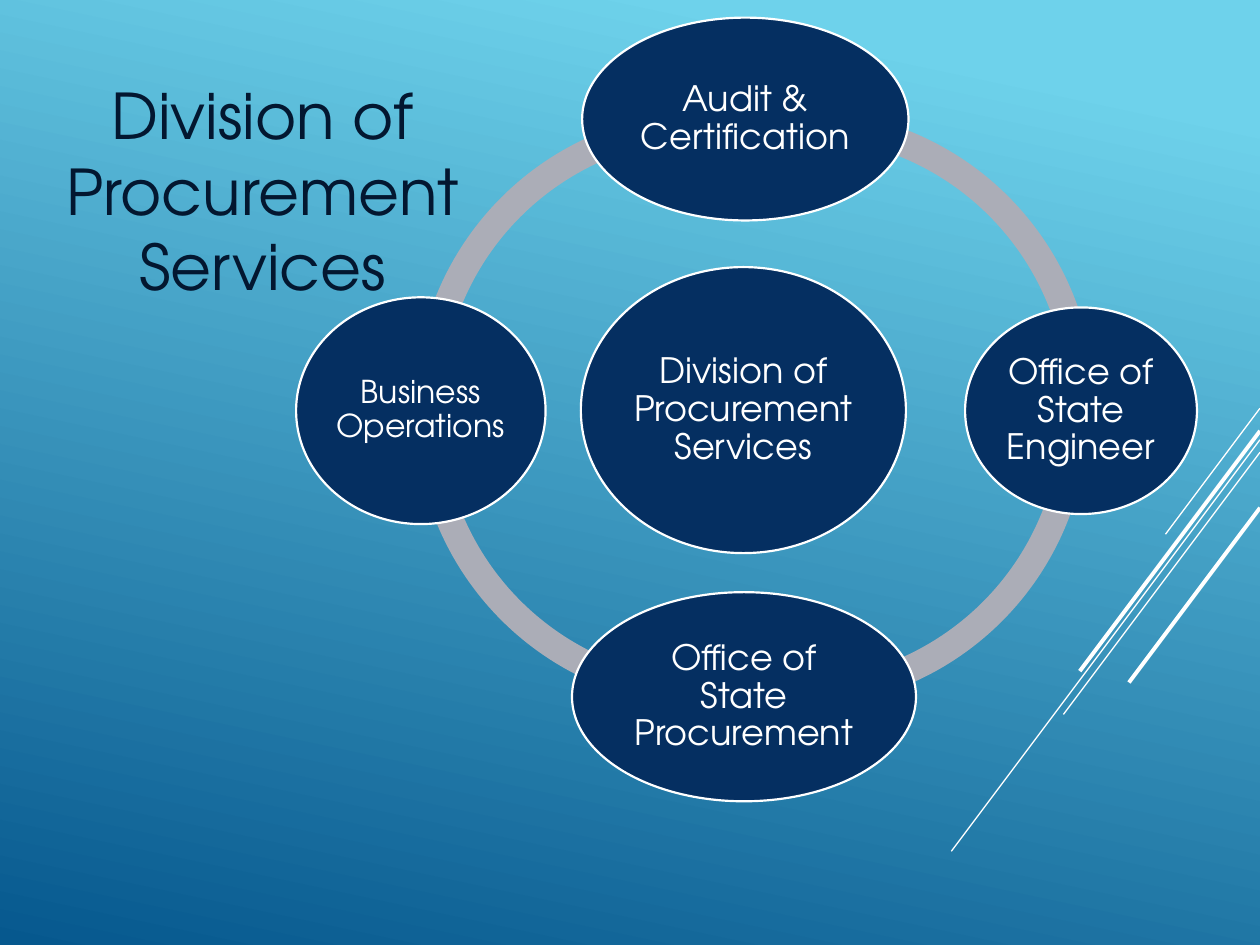
from dataclasses import dataclass

from lxml import etree
from pptx import Presentation
from pptx import util as u
from pptx.dml.color import RGBColor
from pptx.enum import shapes, text
from pptx.oxml import ns


@dataclass(frozen=True)
class Theme:
    font: str = "TeX Gyre Adventor"
    sky: str = "6ED2EB"
    deep: str = "06588E"
    navy: str = "052F61"
    ring: str = "ABADB7"
    ink: str = "031730"
    white: str = "FFFFFF"
    title_size: int = 36
    label_size: int = 20
    small_size: int = 18
    outline: float = 1.25
    thin: float = 0.75
    thick: float = 2.25


THEME = Theme()


@dataclass(frozen=True)
class Box:
    left: float
    top: float
    width: float
    height: float

    def inside(self, left, top, width, height):
        return Box(self.left + left, self.top + top, width, height)

    def lengths(self):
        return [u.Inches(value) for value in (self.left, self.top, self.width, self.height)]


def color(value):
    return RGBColor.from_string(value)


def set_attributes(target, values):
    for name, value in values.items():
        setattr(target, name, value)


def write_text(shape, content, size, ink, insets, line_spacing=1.0):
    frame = shape.text_frame
    horizontal, vertical = (u.Inches(inset) for inset in insets)
    set_attributes(frame, {
        "word_wrap": True,
        "vertical_anchor": text.MSO_ANCHOR.MIDDLE,
        "margin_left": horizontal, "margin_right": horizontal,
        "margin_top": vertical, "margin_bottom": vertical,
    })
    paragraph = frame.paragraphs[0]
    set_attributes(paragraph, {"alignment": text.PP_ALIGN.CENTER, "line_spacing": line_spacing})
    run = paragraph.add_run()
    run.text = content
    set_attributes(run.font, {"name": THEME.font, "size": u.Pt(size)})
    run.font.color.rgb = color(ink)


def add_filled_shape(slide, kind, box, fill):
    shape = slide.shapes.add_shape(kind, *box.lengths())
    shape.shadow.inherit = False
    shape.fill.solid()
    shape.fill.fore_color.rgb = color(fill)
    shape.line.fill.background()
    return shape


def paint_background(slide):
    fill = slide.background.fill
    fill.gradient()
    fill.gradient_angle = 360 - 102
    for stop, position, value in zip(fill.gradient_stops, (0.1, 1), (THEME.sky, THEME.deep)):
        stop.position = position
        stop.color.rgb = color(value)


def add_diagonal_lines(slide, box):
    # Parallel lines fall from the right edge, four down for three across
    right = box.left + box.width
    for drop, run, weight in (
        (0, 0.75, THEME.thin),
        (0.25, 2.45, THEME.thin),
        (0.35, 1.56, THEME.thin),
        (0.18, 1.43, THEME.thick),
        (0.79, 1.04, THEME.thick),
    ):
        start = box.top + drop
        ends = (right, start, right - run, start + run * 4 / 3)
        line = slide.shapes.add_connector(
            shapes.MSO_CONNECTOR.STRAIGHT, *(u.Inches(value) for value in ends))
        line.line.color.rgb = color(THEME.white)
        line.line.width = u.Pt(weight)
        etree.SubElement(line._element.spPr, ns.qn("a:effectLst"))


def add_title(slide, box):
    title = slide.shapes.add_textbox(*box.lengths())
    write_text(title, "Division of Procurement Services",
               THEME.title_size, THEME.ink, (0.07, 0.03))


def add_ring(slide, box):
    # Four arcs, each with its start and end angle in degrees
    diameter, thickness = 4.7, 0.046
    for left, top, start, end in (
        (0.94, 0.74, 179.24, 276.84),
        (0.94, 0.77, 83.17, 180.05),
        (1.59, 0.78, 359.57, 99.45),
        (1.64, 0.73, 260.54, 1.13),
    ):
        arc = add_filled_shape(slide, shapes.MSO_SHAPE.BLOCK_ARC,
                               box.inside(left, top, diameter, diameter), THEME.ring)
        # Angles are stored in 60000ths of a degree, adjustments in 100000ths
        for index, value in enumerate((start * 0.6, end * 0.6, thickness)):
            arc.adjustments[index] = value


def add_offices(slide, box):
    for label, place, size in (
        ("Division of Procurement Services", (2.26, 1.98, 2.58, 2.27), THEME.label_size),
        ("Audit & Certification", (2.27, 0, 2.59, 1.61), THEME.label_size),
        ("Office of State Engineer", (5.31, 2.3, 1.84, 1.64), THEME.label_size),
        ("Office of State Procurement", (2.19, 4.56, 2.73, 1.66), THEME.label_size),
        ("Business Operations", (0, 2.22, 1.98, 1.8), THEME.small_size),
    ):
        office = add_filled_shape(slide, shapes.MSO_SHAPE.OVAL, box.inside(*place), THEME.navy)
        office.line.color.rgb = color(THEME.white)
        office.line.width = u.Pt(THEME.outline)
        write_text(office, label, size, THEME.white, (0.03, 0.03), 0.9)


def main():
    presentation = Presentation()
    set_attributes(presentation, {"slide_width": u.Inches(10), "slide_height": u.Inches(7.5)})
    slide = presentation.slides.add_slide(presentation.slide_layouts[6])

    # Backdrop
    paint_background(slide)
    add_diagonal_lines(slide, Box(7.55, 3.24, 2.45, 3.51))

    # Title and radial diagram
    add_title(slide, Box(0.17, -0.24, 3.83, 3.5))
    diagram = Box(2.35, 0.14, 7.15, 6.22)
    add_ring(slide, diagram)
    add_offices(slide, diagram)

    presentation.save("out.pptx")


if __name__ == "__main__":
    main()
